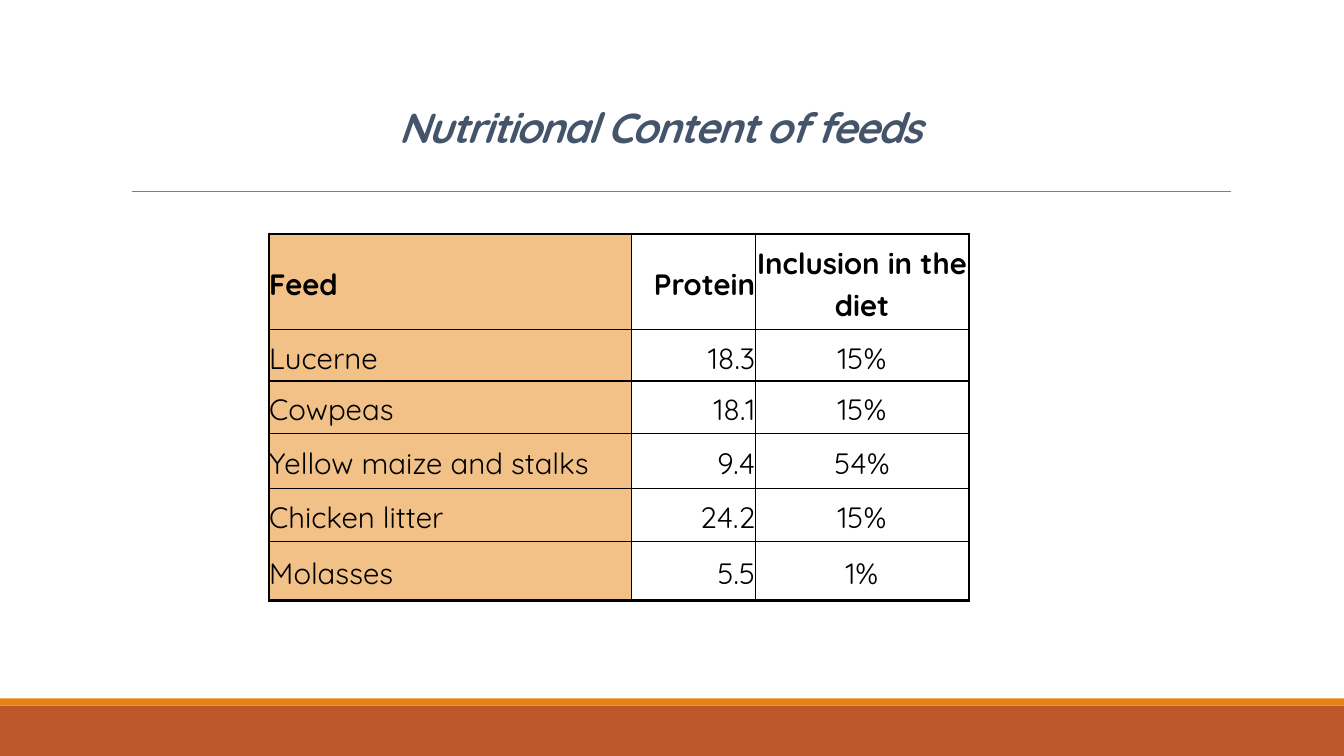
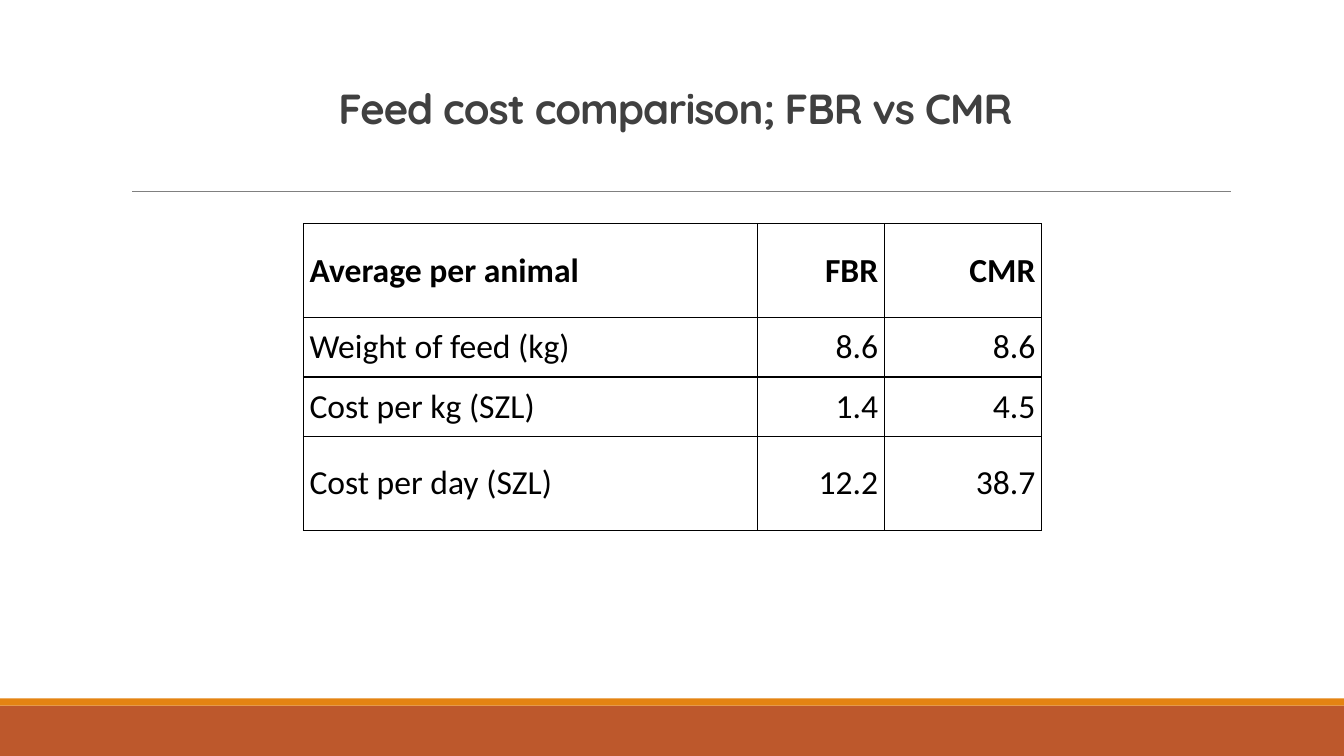
from lxml import etree
from pptx import Presentation
from pptx.dml.color import RGBColor
from pptx.enum.shapes import MSO_CONNECTOR, MSO_SHAPE
from pptx.enum.text import MSO_ANCHOR, PP_ALIGN
from pptx.oxml.ns import qn
from pptx.util import Inches, Pt

LEFT, CENTER, RIGHT = PP_ALIGN.LEFT, PP_ALIGN.CENTER, PP_ALIGN.RIGHT
MIDDLE = MSO_ANCHOR.MIDDLE
RECTANGLE = MSO_SHAPE.RECTANGLE
STRAIGHT = MSO_CONNECTOR.STRAIGHT

COLORS = {
    "footer": "BD582C",
    "footer_edge": "E48312",
    "rule": "808080",
    "blue_title": "44546A",
    "gray_title": "404040",
    "text": "000000",
    "border": "000000",
    "feed_column": "F2C188",
}
TITLE_FONT = "Quicksand"
SLIDE_WIDTH, SLIDE_HEIGHT = 13.33, 7.5

FEEDS = [
    ("Feed", "Protein", "Inclusion in the diet"),
    ("Lucerne", "18.3", "15%"),
    ("Cowpeas", "18.1", "15%"),
    ("Yellow maize and stalks", "9.4", "54%"),
    ("Chicken litter", "24.2", "15%"),
    ("Molasses", "5.5", "1%"),
]
COSTS = [
    ("Average per animal", "FBR", "CMR"),
    ("Weight of feed (kg)", "8.6", "8.6"),
    ("Cost per kg (SZL)", "1.4", "4.5"),
    ("Cost per day (SZL)", "12.2", "38.7"),
]


def rgb(name):
    return RGBColor.from_string(COLORS[name])


def add_band(slide, top, height, color):
    band = slide.shapes.add_shape(
        RECTANGLE, 0, Inches(top), Inches(SLIDE_WIDTH), Inches(height))
    band.shadow.inherit = False
    band.fill.solid()
    band.fill.fore_color.rgb = rgb(color)
    band.line.fill.background()


def add_title_rule(slide):
    y = Inches(1.9)
    rule = slide.shapes.add_connector(
        STRAIGHT, Inches(1.31), y, Inches(12.21), y)
    rule.line.color.rgb = rgb("rule")
    rule.line.width = Pt(0.5)
    etree.SubElement(rule._element.spPr, qn("a:effectLst"))


def add_title(slide, text, box, color, spacing, italic=False):
    """Add a centred title; spacing is the letter spacing in points."""
    frame = slide.shapes.add_textbox(*map(Inches, box)).text_frame
    frame.word_wrap = True
    frame.vertical_anchor = MIDDLE
    frame.margin_left = frame.margin_right = Inches(0.05)
    frame.margin_top = frame.margin_bottom = Inches(0.05)
    paragraph = frame.paragraphs[0]
    paragraph.alignment = CENTER
    paragraph.line_spacing = 0.85
    font = paragraph.font
    font.name, font.size = TITLE_FONT, Pt(30)
    font.bold, font.italic = True, italic
    font.color.rgb = rgb(color)
    run = paragraph.add_run()
    run.text = text
    run._r.get_or_add_rPr().set("spc", str(round(spacing * 100)))


def add_framed_slide(prs):
    """Add a blank slide with the shared footer bands and title rule."""
    slide = prs.slides.add_slide(prs.slide_layouts[6])
    add_band(slide, 7, 0.5, "footer")
    add_band(slide, 6.93, 0.07, "footer_edge")
    add_title_rule(slide)
    return slide


def set_borders(cell, widths):
    """Draw the cell's edges; widths maps L, R, T and B to points."""
    properties = cell._tc.get_or_add_tcPr()
    for side in "LRTB":
        edge = etree.SubElement(
            properties, qn(f"a:ln{side}"), w=str(Pt(widths[side])))
        fill = etree.SubElement(edge, qn("a:solidFill"))
        etree.SubElement(fill, qn("a:srgbClr"), val=COLORS["border"])


def style_cell(cell, margin, fill):
    cell.vertical_anchor = MIDDLE
    cell.margin_left = cell.margin_right = Inches(margin)
    cell.margin_top = cell.margin_bottom = Inches(margin)
    if fill:
        cell.fill.solid()
        cell.fill.fore_color.rgb = rgb(fill)
    else:
        cell.fill.background()


def add_data_table(slide, data, left, top, widths, heights, aligns, font_name,
                   size, margin=0, outer=1, line_spacing=1, header_space=0,
                   label_fill=None):
    """Add a table with a bold first row; outer is the frame's width."""
    table = slide.shapes.add_table(
        len(data), len(widths), Inches(left), Inches(top),
        Inches(sum(widths)), Inches(sum(heights))).table
    table.first_row = table.horz_banding = False
    for column, width in zip(table.columns, widths):
        column.width = Inches(width)
    for row, height in zip(table.rows, heights):
        row.height = Inches(height)

    last_row, last_column = len(data) - 1, len(widths) - 1
    for r, values in enumerate(data):
        for c, value in enumerate(values):
            cell = table.cell(r, c)
            cell.text = value
            set_borders(cell, {
                "L": outer if c == 0 else 1,
                "R": outer if c == last_column else 1,
                "T": outer if r == 0 else 1,
                "B": outer if r == last_row else 1,
            })
            style_cell(cell, margin, label_fill if c == 0 else None)
            paragraph = cell.text_frame.paragraphs[0]
            paragraph.alignment = aligns[c]
            paragraph.line_spacing = line_spacing
            paragraph.space_before = Pt(header_space if r == 0 else 0)
            font = paragraph.font
            font.name, font.size, font.bold = font_name, Pt(size), r == 0
            font.color.rgb = rgb("text")


def add_nutrition_slide(prs):
    slide = add_framed_slide(prs)
    add_title(slide, "Nutritional Content of feeds", (0.8, 0.57, 11.5, 1.45),
              "blue_title", -1.2, italic=True)
    add_data_table(
        slide, FEEDS, 2.67, 2.32, [3.59, 1.23, 2.12],
        [0.95, 0.51, 0.52, 0.55, 0.52, 0.59], [LEFT, RIGHT, CENTER],
        "Quicksand", 21, outer=2, line_spacing=1.15, header_space=10,
        label_fill="feed_column")


def add_cost_slide(prs):
    slide = add_framed_slide(prs)
    add_title(slide, "Feed cost comparison; FBR vs CMR", (1.2, 0.31, 11, 1.59),
              "gray_title", -0.7)
    add_data_table(
        slide, COSTS, 3.01, 2.22, [4.5, 1.26, 1.56],
        [0.93, 0.59, 0.59, 0.93], [LEFT, RIGHT, RIGHT],
        "Calibri", 24, margin=0.06)


def main():
    prs = Presentation()
    prs.slide_width = Inches(SLIDE_WIDTH)
    prs.slide_height = Inches(SLIDE_HEIGHT)
    add_nutrition_slide(prs)
    add_cost_slide(prs)
    prs.save("out.pptx")


if __name__ == "__main__":
    main()
